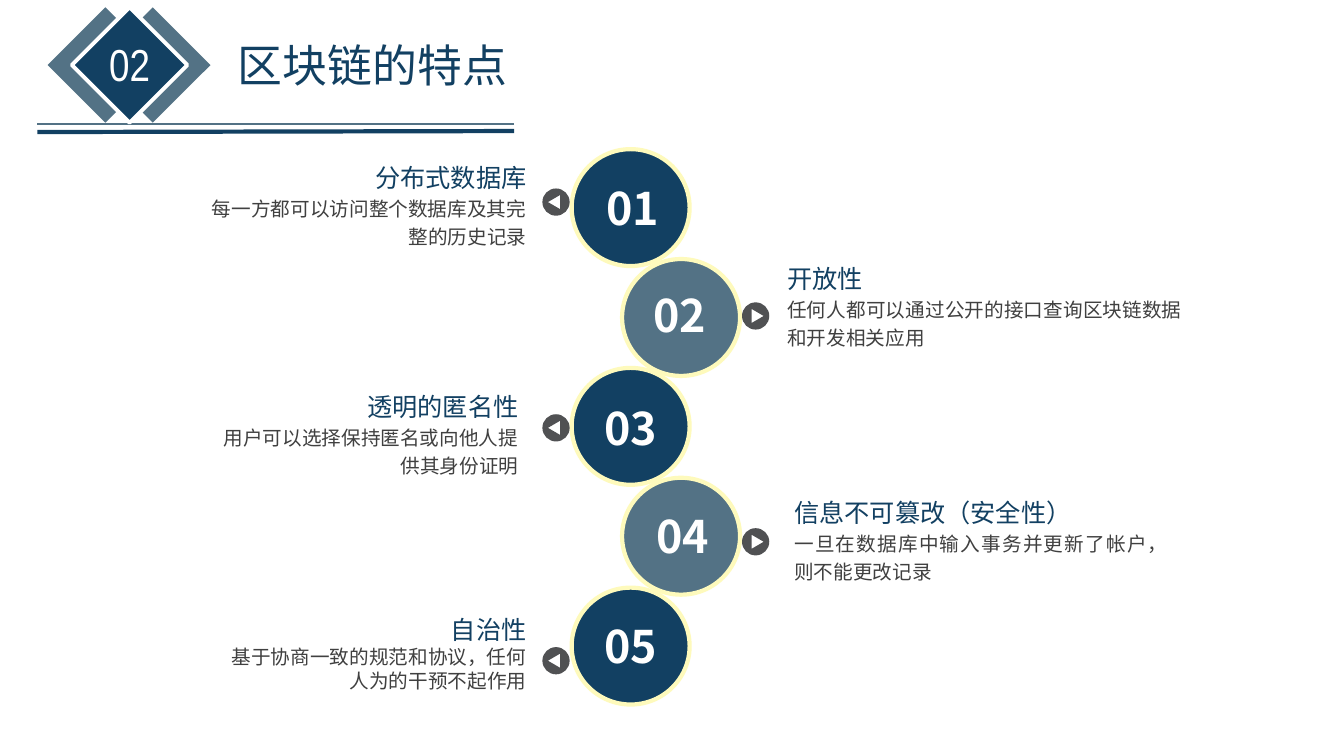
from dataclasses import dataclass

from lxml import etree
from pptx import Presentation
from pptx import util as u
from pptx.dml.color import RGBColor
from pptx.enum import shapes, text
from pptx.oxml.ns import qn

PX = 9144  # EMU per px, 100 px to the inch
ARC = 0.5523  # handle length of a quarter circle, as a share of its radius
NAVY = RGBColor(0x12, 0x40, 0x62)
STEEL = RGBColor(0x53, 0x72, 0x85)
CREAM = RGBColor(0xFE, 0xFA, 0xBC)
GREY = RGBColor(0x50, 0x51, 0x53)
INK = RGBColor(0x40, 0x40, 0x40)
WHITE = RGBColor(0xFF, 0xFF, 0xFF)
SANS = "Noto Sans CJK SC"
NARROW = "Arial Narrow"
LEFT, RIGHT = text.PP_ALIGN.RIGHT, text.PP_ALIGN.JUSTIFY  # by side of the chain


@dataclass
class Box:
    x: int
    y: int
    w: int
    h: int

    def emu(self) -> list[int]:
        return [v * PX for v in (self.x, self.y, self.w, self.h)]


@dataclass
class Trait:
    head: str
    body: str
    area: Box
    num_x: int
    num_y: int
    arrow_y: int
    space: float | None = 1.2


TRAITS = [
    Trait("分布式数据库", "每一方都可以访问整个数据库及其完整的历史记录",
          Box(189, 150, 343, 103), 586, 174, 187),
    Trait("开放性", "任何人都可以通过公开的接口查询区块链数据和开发相关应用",
          Box(771, 250, 411, 103), 633, 281, 300),
    Trait("透明的匿名性", "用户可以选择保持匿名或向他人提供其身份证明",
          Box(209, 377, 315, 103), 584, 393, 411),
    Trait("信息不可篡改（安全性）", "一旦在数据库中输入事务并更新了帐户，则不能更改记录",
          Box(778, 482, 390, 103), 636, 500, 524),
    Trait("自治性", "基于协商一致的规范和协议，任何人为的干预不起作用",
          Box(207, 605, 325, 87), 584, 609, 642, None),
]


def style(para, size: int, color: RGBColor, face: str = SANS, bold: bool = False) -> None:
    for run in para.runs:
        font = run.font
        font.size, font.bold, font.name = u.Pt(size), bold, face
        font.color.rgb = color
        etree.SubElement(run._r.get_or_add_rPr(), qn("a:ea"), typeface=face)


def label(slide, box: Box, lines: list[str]):
    frame = slide.shapes.add_textbox(*box.emu()).text_frame
    frame.word_wrap = True
    frame.auto_size = text.MSO_AUTO_SIZE.SHAPE_TO_FIT_TEXT
    frame.text = "\n".join(lines)
    return frame.paragraphs


def number(slide, box: Box, digits: str, face: str, bold: bool) -> None:
    para = label(slide, box, [digits])[0]
    para.alignment = text.PP_ALIGN.CENTER
    style(para, 32, WHITE, face, bold)


def paint(shape, fill: RGBColor, edge: RGBColor | None = None, width: float = 0) -> None:
    shape.shadow.inherit = False
    shape.fill.solid()
    shape.fill.fore_color.rgb = fill
    if edge is None:
        shape.line.fill.background()
    else:
        shape.line.color.rgb = edge
        shape.line.width = u.Pt(width)


def rule(slide, start: int, end: int, color: RGBColor, width: float) -> None:
    line = slide.shapes.add_connector(shapes.MSO_CONNECTOR.STRAIGHT,
                                      510 * PX, start * PX, 37 * PX, end * PX)
    line.line.color.rgb = color
    line.line.width = u.Pt(width)
    etree.SubElement(line._element.spPr, qn("a:effectLst"))


def bend(shape) -> None:
    """Turn the first four sides of a freeform into quarter circles."""
    mid = (shape.width / 2, shape.height / 2)
    route = next(shape._element.iter(qn("a:path")))
    spots = [(int(p.get("x")), int(p.get("y"))) for p in route.iter(qn("a:pt"))]
    sides = route.findall(qn("a:lnTo"))
    for side, a, b in zip(sides[:4], spots, spots[1:]):
        out = [p + ARC * (q - m) for p, q, m in zip(a, b, mid)]
        back = [q + ARC * (p - m) for p, q, m in zip(a, b, mid)]
        curve = etree.Element(qn("a:cubicBezTo"))
        for x, y in (out, back, b):
            etree.SubElement(curve, qn("a:pt"), x=str(round(x)), y=str(round(y)))
        route.replace(side, curve)


def arrow(slide, box: Box, way: int) -> None:
    """Draw a disc with a triangular hole; way is -1 for left, 1 for right."""
    rad = box.w / 2
    ends = [(0, -rad), (-way * rad, 0), (0, rad), (way * rad, 0), (0, -rad)]
    wedge = [(8, 0), (-4, 7), (-4, -7), (8, 0)]
    disc = [((box.x + rad + x) * PX, (box.y + rad + y) * PX) for x, y in ends]
    hole = [((box.x + rad + way * x) * PX, (box.y + rad + y) * PX) for x, y in wedge]
    pen = slide.shapes.build_freeform(*disc[0])
    pen.add_line_segments(disc[1:])
    pen.move_to(*hole[0])
    pen.add_line_segments(hole[1:])
    shape = pen.convert_to_shape()
    bend(shape)
    paint(shape, GREY)


def header(slide) -> None:
    # Title
    title = slide.shapes.title
    title.left, title.top, title.width, title.height = Box(226, 32, 444, 64).emu()
    frame = title.text_frame
    frame.text = "区块链的特点"
    frame.vertical_anchor = text.MSO_ANCHOR.TOP
    frame.auto_size = text.MSO_AUTO_SIZE.SHAPE_TO_FIT_TEXT
    frame.paragraphs[0].alignment = text.PP_ALIGN.LEFT
    style(frame.paragraphs[0], 32, NAVY)

    # Diamond badge and rules
    rule(slide, 123, 123, STEEL, 1)
    for x, fill, edge in ((111, STEEL, None), (64, STEEL, None), (88, NAVY, WHITE)):
        gem = slide.shapes.add_shape(shapes.MSO_SHAPE.ROUNDED_RECTANGLE,
                                     *Box(x, 24, 81, 81).emu())
        gem.adjustments[0] = 0
        gem.rotation = 45
        paint(gem, fill, edge, 2.75)
    number(slide, Box(95, 32, 67, 64), "02", NARROW, False)
    rule(slide, 130, 131, NAVY, 3)


def chain(slide) -> None:
    # Circles
    for i in range(len(TRAITS)):
        odd = i % 2
        box = Box(567 + 50 * odd, (593 + 435 * i) // 4, 117, 116)
        disc = slide.shapes.add_shape(shapes.MSO_SHAPE.OVAL, *box.emu())
        paint(disc, STEEL if odd else NAVY, CREAM, 3)

    # Arrows, numbers and texts
    for i, item in enumerate(TRAITS):
        odd = i % 2
        arrow(slide, Box(736 if odd else 538, item.arrow_y, 27, 27), 1 if odd else -1)
        number(slide, Box(item.num_x, item.num_y, 83, 64), f"{i + 1:02}", SANS, True)
        paras = label(slide, item.area, [item.head, item.body])
        for para, size, color in zip(paras, (18, 14), (NAVY, INK)):
            para.alignment = RIGHT if odd else LEFT
            para.line_spacing = item.space
            style(para, size, color)


def main() -> None:
    deck = Presentation()
    deck.slide_width, deck.slide_height = 1333 * PX, 750 * PX
    slide = deck.slides.add_slide(deck.slide_layouts[5])
    header(slide)
    chain(slide)
    deck.save("out.pptx")


if __name__ == "__main__":
    main()
